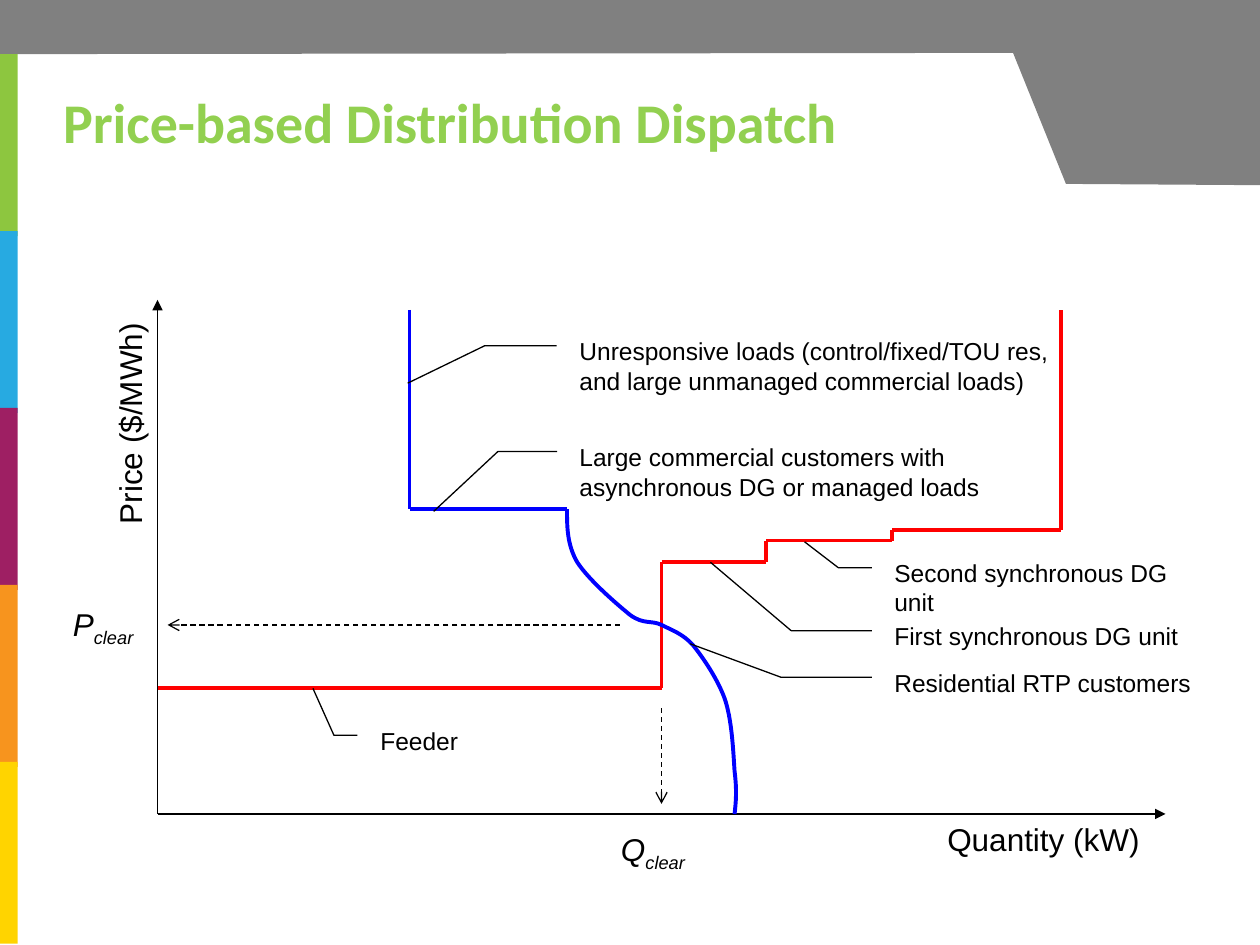
from pptx import Presentation, util as u
from pptx.dml.color import RGBColor
from pptx.enum import dml, shapes as sh, text as tx
from pptx.oxml import ns, xmlchemy as xc

HUES = {
    "gray": "808080", "title": "92D050", "ink": "000000",
    "supply": "FF0000", "demand": "0000FF",
}
BANDS = {
    "green": "8DC63F", "sky": "27AAE1", "plum": "9E1F63",
    "orange": "F7941E", "gold": "FFD400",
}


def rgb(name):
    return RGBColor.from_string({**HUES, **BANDS}[name])


def paint(shape, hue):
    shape.shadow.inherit = False
    shape.fill.solid()
    shape.fill.fore_color.rgb = rgb(hue)
    shape.line.fill.background()


def stroke(shape, hue, width):
    shape.line.color.rgb = rgb(hue)
    shape.line.width = u.Pt(width)


def write(para, words, size, hue="ink", font="Arial", **style):
    run = para.add_run()
    run.text = words
    run.font.size = u.Pt(size)
    run.font.name = font
    run.font.color.rgb = rgb(hue)
    for key, value in style.items():
        setattr(run.font, key, value)
    return run


def spot(box, x, y):
    left, top, width, height = box
    return u.Inches(left + x), u.Inches(top + height - y)


def link(parent, box, start, end, hue="ink", width=0.75, head=None, dash=False):
    line = parent.shapes.add_connector(
        sh.MSO_CONNECTOR.STRAIGHT, *spot(box, *start), *spot(box, *end))
    stroke(line, hue, width)
    if dash:
        line.line.dash_style = dml.MSO_LINE.DASH
    props = line._element.spPr
    if head:
        tip = xc.OxmlElement("a:tailEnd")
        tip.set("type", head)
        props.find(ns.qn("a:ln")).append(tip)
    props.append(xc.OxmlElement("a:effectLst"))


def chain(parent, box, points, hue):
    for start, end in zip(points, points[1:]):
        link(parent, box, start, end, hue, 2.25)


def curve(parent, box, points, hue):
    spots = [spot(box, *point) for point in points]
    pen = parent.shapes.build_freeform(*spots[0])
    pen.add_line_segments(spots[1:], close=False)
    shape = pen.convert_to_shape()
    shape.shadow.inherit = False
    shape.fill.background()
    stroke(shape, hue, 2.25)
    legs = list(shape._element.iter(ns.qn("a:lnTo")))
    for i in range(0, len(legs), 3):
        bend = xc.OxmlElement("a:cubicBezTo")
        legs[i].addprevious(bend)
        for leg in legs[i:i + 3]:
            bend.append(leg[0])
            leg.getparent().remove(leg)


def header(slide, box):
    left, top, width, height = box
    edge = [(0, 0.46), (8.05, 0.45), (8.47, 1.49), (10.02, 1.5), (10.02, 0.02), (0, 0)]
    spots = [(u.Inches(left + x), u.Inches(top + y)) for x, y in edge]
    pen = slide.shapes.build_freeform(*spots[0])
    pen.add_line_segments(spots[1:], close=True)
    paint(pen.convert_to_shape(), "gray")


def sidebar(slide, box):
    left, top, width, height = box
    step = height / len(BANDS)
    for i, hue in enumerate(BANDS):
        band = slide.shapes.add_shape(
            sh.MSO_SHAPE.RECTANGLE, u.Inches(left), u.Inches(top + i * step),
            u.Inches(width), u.Inches(step + 0.04))
        paint(band, hue)


def title(slide, box):
    head = slide.shapes.title
    head.left, head.top, head.width, head.height = map(u.Inches, box)
    frame = head.text_frame
    frame.margin_left = frame.margin_right = frame.margin_top = frame.margin_bottom = 0
    frame.vertical_anchor = tx.MSO_ANCHOR.MIDDLE
    frame.auto_size = tx.MSO_AUTO_SIZE.NONE
    para = frame.paragraphs[0]
    para.alignment = tx.PP_ALIGN.LEFT
    write(para, "Price-based Distribution Dispatch", 32, "title", "Calibri", bold=True)


def label(slide, box, x, y, width, words, sub=None, turn=0):
    note = slide.shapes.add_textbox(*spot(box, x, y), u.Inches(width), u.Inches(0.4))
    note.rotation = turn
    frame = note.text_frame
    frame.word_wrap = False
    frame.auto_size = tx.MSO_AUTO_SIZE.SHAPE_TO_FIT_TEXT
    para = frame.paragraphs[0]
    write(para, words, 18, italic=bool(sub))
    if sub:
        run = write(para, sub, 18, italic=True)
        run.font._element.set("baseline", "-25000")


def callout(slide, box, x, y, width, height, words, bends):
    note = slide.shapes.add_shape(
        sh.MSO_SHAPE.LINE_CALLOUT_2_NO_BORDER, *spot(box, x, y),
        u.Inches(width), u.Inches(height))
    for i, bend in enumerate(bends):
        note.adjustments[i] = bend
    note.shadow.inherit = False
    note.fill.background()
    stroke(note, "ink", 0.75)
    frame = note.text_frame
    frame.word_wrap = True
    frame.vertical_anchor = tx.MSO_ANCHOR.TOP
    para = frame.paragraphs[0]
    para.alignment = tx.PP_ALIGN.LEFT
    write(para, words, 14)


def market(slide, box):
    left, top, width, height = box
    for end in ((width, 0), (0, height)):
        link(slide, box, (0, 0), end, head="triangle")

    supply = [(0, 1), (4, 1), (4, 2), (4.83, 2), (4.83, 2.17),
              (5.83, 2.17), (5.83, 2.25), (7.17, 2.25), (7.17, 4)]
    chain(slide.shapes.add_group_shape(), box, supply, "supply")

    demand = slide.shapes.add_group_shape()
    chain(demand, box, [(2, 4), (2, 2.42), (3.25, 2.42)], "demand")
    curve(demand, box, [
        (3.25, 2.42), (3.25, 2.28), (3.25, 2.14), (3.33, 2),
        (3.42, 1.86), (3.64, 1.67), (3.75, 1.58),
        (3.86, 1.5), (3.92, 1.54), (4, 1.5),
        (4.08, 1.46), (4.17, 1.43), (4.25, 1.34),
        (4.33, 1.24), (4.44, 1.08), (4.5, 0.92),
        (4.56, 0.75), (4.57, 0.49), (4.58, 0.34),
        (4.6, 0.18), (4.59, 0.09), (4.58, 0)], "demand")

    link(slide, box, (3.67, 1.5), (0.08, 1.5), head="arrow", dash=True)
    link(slide, box, (4, 0.84), (4, 0.08), head="arrow", dash=True)

    label(slide, box, -0.77, 1.71, 0.73, "P", "clear")
    label(slide, box, 3.58, -0.08, 0.76, "Q", "clear")
    label(slide, box, 6.17, 0, 1.73, "Quantity (kW)")
    label(slide, box, -1.12, 3.3, 1.8, "Price ($/MWh)", turn=270)

    for note in (
        (3.25, 3, 3.92, 0.54,
         "Large commercial customers with asynchronous DG or managed loads",
         (0.23, -0.02, 0.23, -0.14, 1.11, -0.27)),
        (5.75, 1.58, 2.67, 0.38, "First synchronous DG unit",
         (0.33, -0.03, 0.33, -0.27, -1.1, -0.51)),
        (1.67, 0.75, 2.08, 0.38, "Feeder",
         (0.33, -0.04, 0.33, -0.13, -0.65, -0.21)),
        (5.75, 1.21, 2.67, 0.38, "Residential RTP customers",
         (0.33, -0.03, 0.33, -0.3, -0.37, -0.57)),
        (3.25, 3.84, 4.08, 0.54,
         "Unresponsive loads (control/fixed/TOU res, and large unmanaged commercial loads)",
         (0.23, -0.02, 0.23, -0.16, 0.78, -0.31)),
        (5.75, 2.08, 2.67, 0.38, "Second synchronous DG unit",
         (0.33, -0.03, 0.33, -0.13, -0.21, -0.23)),
    ):
        callout(slide, box, *note)


def main():
    deck = Presentation()
    deck.slide_width, deck.slide_height = u.Inches(10), u.Inches(7.5)
    slide = deck.slides.add_slide(deck.slide_layouts[5])
    header(slide, (-0.01, -0.03, 10.02, 1.5))
    sidebar(slide, (0, 0.43, 0.14, 7.02))
    title(slide, (0.5, 0.42, 7.67, 1.08))
    market(slide, (1.25, 2.38, 8, 4.08))
    deck.save("out.pptx")


if __name__ == "__main__":
    main()
